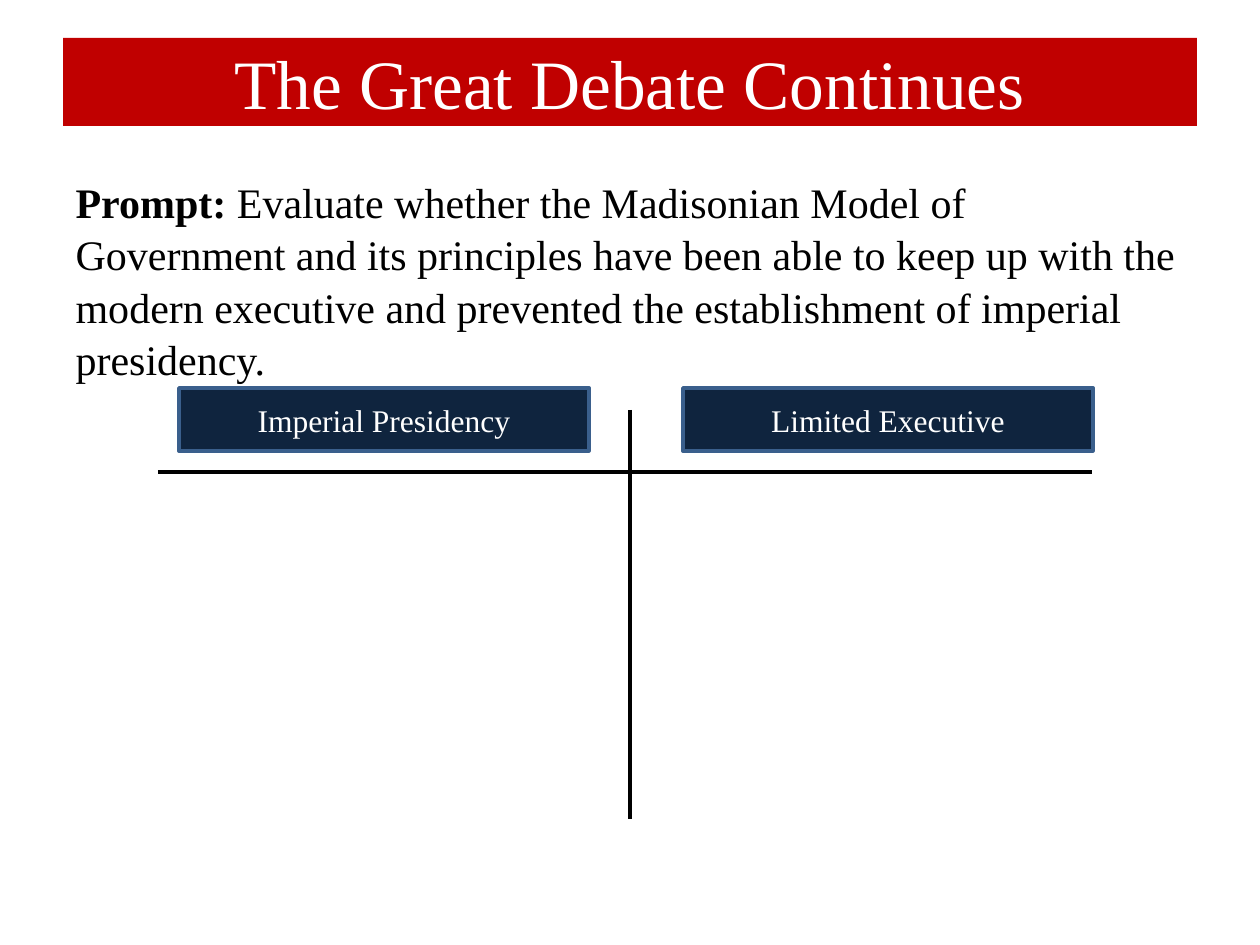
"""Build the debate slide: title bar, prompt and a two-column T-chart."""
from lxml.etree import SubElement
from pptx import Presentation
from pptx.dml.color import RGBColor
from pptx.enum.shapes import MSO_CONNECTOR, MSO_SHAPE
from pptx.enum.text import MSO_ANCHOR, MSO_AUTO_SIZE, PP_ALIGN
from pptx.oxml.ns import qn
from pptx.util import Emu, Pt


def px(*values):
    return [Emu(round(v * 914400 / 126)) for v in values]


def color(fmt, value):
    if hasattr(fmt, "solid"):
        fmt.solid()
        fmt = fmt.fore_color
    else:
        fmt = fmt.color
    fmt.rgb = RGBColor.from_string(value)


prs = Presentation()
prs.slide_width, prs.slide_height = px(1260, 945)
s = prs.slides.add_slide(prs.slide_layouts[1])

title = s.shapes.title
title.left, title.top, title.width, title.height = px(63, 38, 1134, 88)
color(title.fill, "C00000")
tf = title.text_frame
tf.text = "The Great Debate Continues"
tf.auto_size = MSO_AUTO_SIZE.NONE
tf.vertical_anchor = MSO_ANCHOR.MIDDLE
p = tf.paragraphs[0]
p.alignment = PP_ALIGN.CENTER
r = p.runs[0]
r.font.name, r.font.size = "Times New Roman", Pt(39.6)
color(r.font, "FFFFFF")

body = s.placeholders[1]
body.left, body.top, body.width, body.height = px(63, 168, 1134, 676)
color(body.fill, "FFFFFF")
tf = body.text_frame
tf.auto_size = MSO_AUTO_SIZE.NONE
p = tf.paragraphs[0]
p.space_before = Pt(0)
p.line_spacing = 1.04
pPr = p._p.get_or_add_pPr()
pPr.set("marL", "0")
pPr.set("indent", "0")
SubElement(pPr, qn("a:buNone"))
for text, bold in (
    ("Prompt: ", True),
    ("Evaluate whether the Madisonian Model of Government and its principles "
     "have been able to keep up with the modern executive and prevented the "
     "establishment of imperial presidency.", False),
):
    r = p.add_run()
    r.text = text
    r.font.name, r.font.size, r.font.bold = "Times New Roman", Pt(24), bold
    color(r.font, "000000")

for ends in ((158, 472, 1092, 472), (630, 410, 630, 819)):
    line = s.shapes.add_connector(MSO_CONNECTOR.STRAIGHT, *px(*ends))
    color(line.line, "000000")
    line.line.width = Pt(2.25)
    SubElement(line._element.spPr, qn("a:effectLst"))

for left, text in ((179, "Imperial Presidency"), (683, "Limited Executive")):
    sp = s.shapes.add_shape(MSO_SHAPE.RECTANGLE, *px(left, 388, 410, 63))
    sp.shadow.inherit = False
    color(sp.fill, "0F243E")
    color(sp.line, "3A5F8C")
    sp.line.width = Pt(2)
    tf = sp.text_frame
    tf.text = text
    tf.word_wrap = True
    tf.vertical_anchor = MSO_ANCHOR.MIDDLE
    p = tf.paragraphs[0]
    p.alignment = PP_ALIGN.CENTER
    r = p.runs[0]
    r.font.name, r.font.size = "Times New Roman", Pt(18)
    color(r.font, "FFFFFF")

prs.save("out.pptx")
